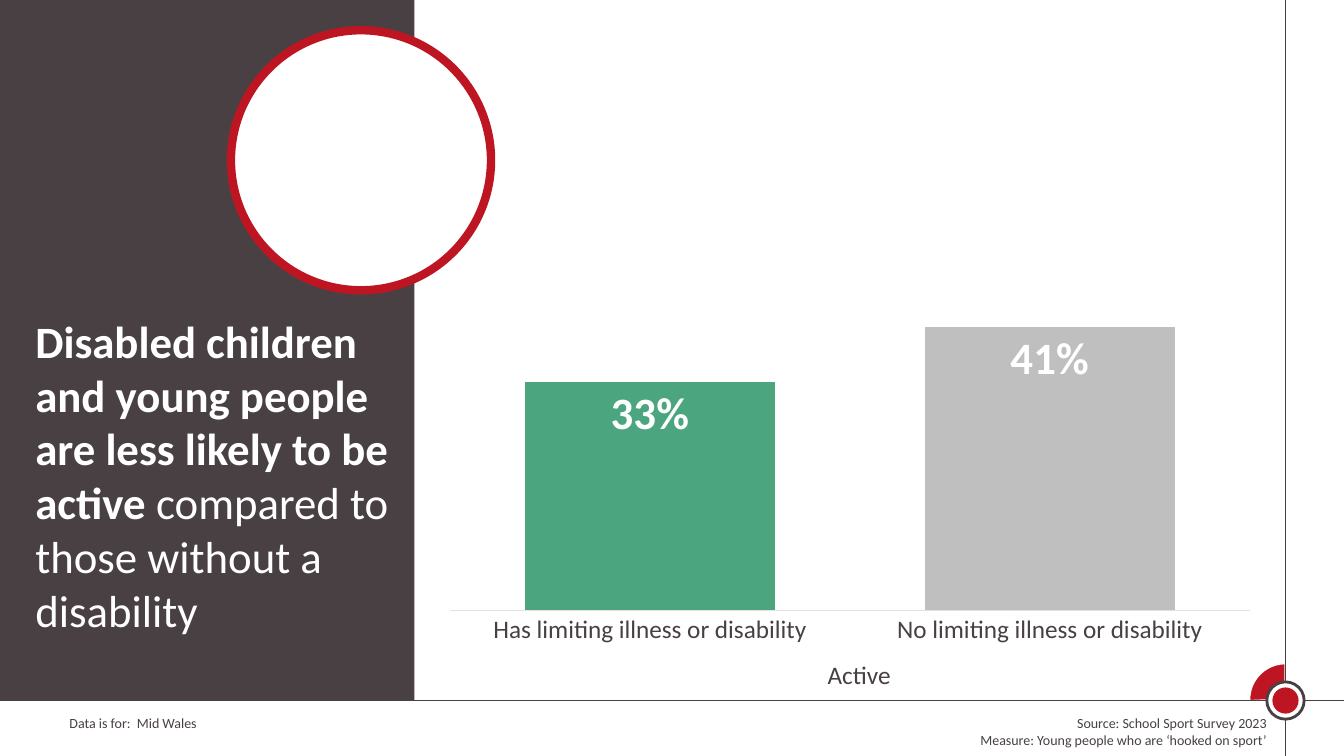
from dataclasses import dataclass

from lxml import etree
from pptx import Presentation
from pptx.chart import data as chart_data
from pptx.dml.color import RGBColor
from pptx.enum import chart as ch, shapes, text
from pptx.oxml.ns import qn
from pptx.util import Inches, Pt


@dataclass(frozen=True)
class Theme:
    font: str = "Calibri"
    dark: RGBColor = RGBColor.from_string("484043")
    red: RGBColor = RGBColor.from_string("BD1622")
    white: RGBColor = RGBColor.from_string("FFFFFF")
    green: RGBColor = RGBColor.from_string("4BA57E")
    grey: RGBColor = RGBColor.from_string("BFBFBF")
    axis: RGBColor = RGBColor.from_string("E5E1E3")
    headline: int = 32
    label: int = 18
    chart: int = 16
    note: int = 10


theme = Theme()


def format_font(font, size, color, bold=False):
    values = {"name": theme.font, "size": Pt(size), "bold": bold}
    for attribute, value in values.items():
        setattr(font, attribute, value)
    font.color.rgb = color


def add_filled(kind, box, fill, line=None, width=0):
    """Add a preset shape without shadow; no line colour means no outline."""
    shape = slide.shapes.add_shape(kind, *map(Inches, box))
    shape.shadow.inherit = False
    shape.fill.solid()
    shape.fill.fore_color.rgb = fill
    if line is None:
        shape.line.fill.background()
    else:
        shape.line.color.rgb = line
        shape.line.width = Pt(width)
    return shape


prs = Presentation()
prs.slide_width, prs.slide_height = Inches(13.33), Inches(7.5)
slide = prs.slides.add_slide(prs.slide_layouts[5])

# Corner emblem where the two frame lines cross
cross_x, cross_y = 12.75, 6.95
wedge = add_filled(shapes.MSO_SHAPE.PIE, (12.39, 6.58, 0.72, 0.72),
                   theme.red, theme.white, 1.5)
wedge.adjustments[0], wedge.adjustments[1] = 106.617, 162

for ends in ((cross_x, 0, cross_x, 7.5), (0, cross_y, 13.33, cross_y)):
    frame_line = slide.shapes.add_connector(
        shapes.MSO_CONNECTOR.STRAIGHT, *map(Inches, ends))
    frame_line.line.color.rgb = theme.dark
    frame_line.line.width = Pt(1)
    properties = frame_line.element.find(qn("p:spPr"))
    etree.SubElement(properties, qn("a:effectLst"))

for diameter, fill, outline in ((0.37, theme.white, theme.dark),
                                (0.26, theme.red, None)):
    corner = (cross_x - diameter / 2, cross_y - diameter / 2)
    add_filled(shapes.MSO_SHAPE.OVAL, (*corner, diameter, diameter),
               fill, outline, 2)

# Left panel and its ring
add_filled(shapes.MSO_SHAPE.RECTANGLE, (-0.01, 0, 4.12, cross_y), theme.dark)
add_filled(shapes.MSO_SHAPE.OVAL, (2.29, 0.3, 2.58, 2.58),
           theme.white, theme.red, 6)

# Headline, raised above the panel
headline = slide.shapes.title
slide.shapes.element.append(headline.element)
headline_box = {"left": 0.25, "top": 3.06, "width": 3.71, "height": 3.87}
for side, length in headline_box.items():
    setattr(headline, side, Inches(length))
headline_format = {
    "word_wrap": True,
    "auto_size": text.MSO_AUTO_SIZE.NONE,
    "vertical_anchor": text.MSO_ANCHOR.TOP,
}
for attribute, value in headline_format.items():
    setattr(headline.text_frame, attribute, value)
statement = headline.text_frame.paragraphs[0]
statement.alignment = text.PP_ALIGN.LEFT
for words, bold in (
    ("Disabled children and young people are less likely to be active ", True),
    ("compared to those without a disability", False),
):
    run = statement.add_run()
    run.text = words
    format_font(run.font, theme.headline, theme.white, bold)

# Footer notes and chart caption
left, right = text.PP_ALIGN.LEFT, text.PP_ALIGN.RIGHT
captions = (
    ((0.59, 7.04, 4.39, 0.27), left, theme.note, ["Data is for:  Mid Wales"]),
    ((6.19, 7.04, 6.47, 0.44), right, theme.note,
     ["Source: School Sport Survey 2023",
      "Measure: Young people who are ‘hooked on sport’"]),
    ((8.11, 6.49, 1.22, 0.4), left, theme.label, ["Active"]),
)
for box, alignment, size, lines in captions:
    frame = slide.shapes.add_textbox(*map(Inches, box)).text_frame
    frame.word_wrap = True
    frame.text = "\n".join(lines)
    for paragraph in frame.paragraphs:
        paragraph.alignment = alignment
        format_font(paragraph.runs[0].font, size, theme.dark)

# Share of active children by disability
activity = chart_data.CategoryChartData(number_format="0%")
activity.categories = ["Has limiting illness or disability",
                       "No limiting illness or disability"]
activity.add_series("Series 1", (0.33, 0.41))
chart = slide.shapes.add_chart(
    ch.XL_CHART_TYPE.COLUMN_CLUSTERED,
    *map(Inches, (4.3, 1.85, 8.26, 4.64)), activity).chart
chart.has_legend = False
chart.has_title = False
format_font(chart.font, theme.chart, theme.dark)

groups = chart.category_axis
groups.major_tick_mark = ch.XL_TICK_MARK.NONE
groups.format.line.color.rgb = theme.axis
groups.format.line.width = Pt(0.75)
format_font(groups.tick_labels.font, theme.label, theme.dark)

share_format = {"minimum_scale": 0, "maximum_scale": 0.6,
                "has_major_gridlines": False, "visible": False}
for attribute, value in share_format.items():
    setattr(chart.value_axis, attribute, value)

columns = chart.plots[0]
columns.gap_width = 60
columns.vary_by_categories = False
for index, color in enumerate((theme.green, theme.grey)):
    column_fill = columns.series[0].points[index].format.fill
    column_fill.solid()
    column_fill.fore_color.rgb = color

columns.has_data_labels = True
label_format = {"show_value": True, "number_format": "0%",
                "number_format_is_linked": False,
                "position": ch.XL_LABEL_POSITION.INSIDE_END}
for attribute, value in label_format.items():
    setattr(columns.data_labels, attribute, value)
format_font(columns.data_labels.font, theme.headline, theme.white, True)

prs.save("out.pptx")
